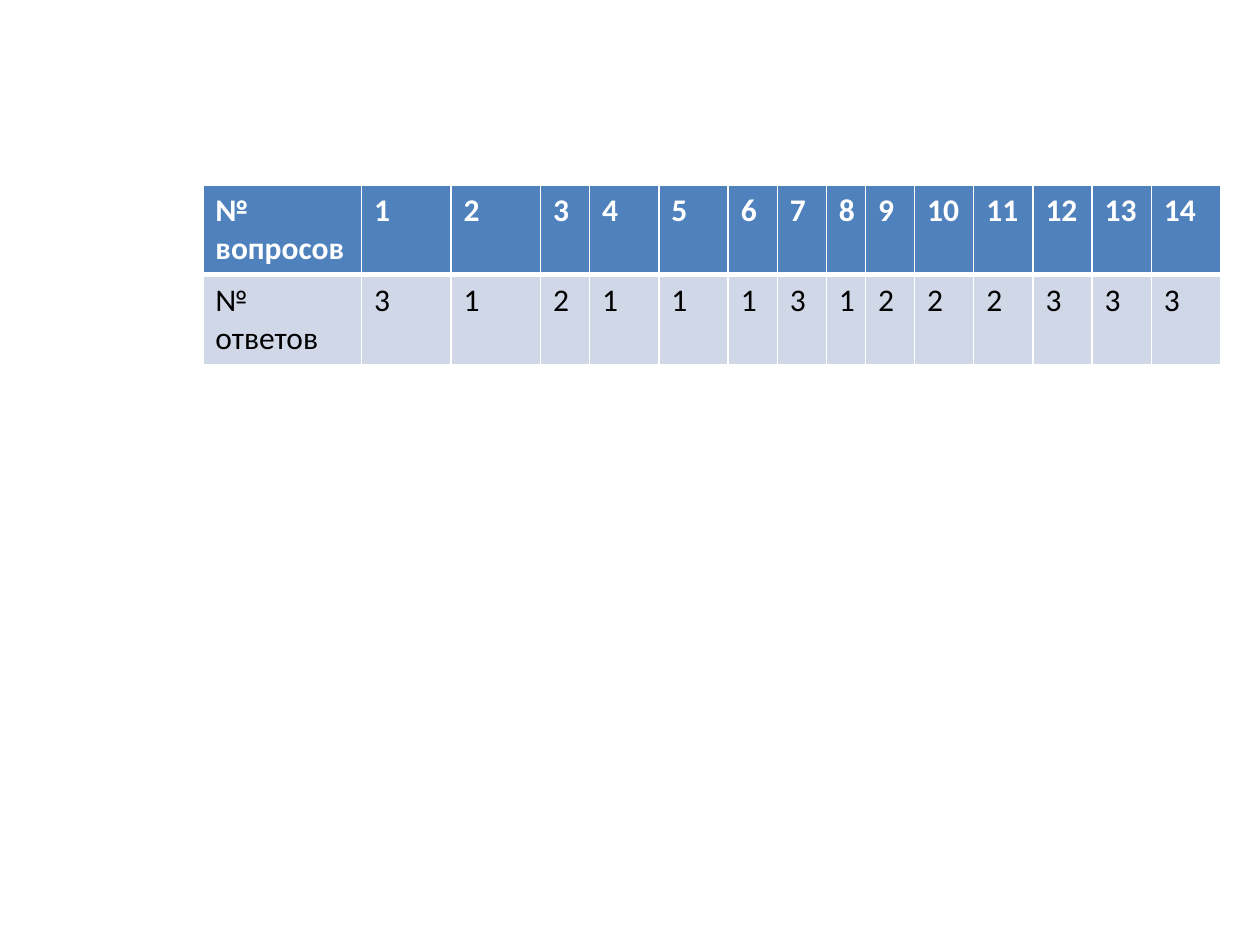
import pptx
import pptx.dml.color
import pptx.oxml
import pptx.util
from pptx.oxml.ns import nsdecls
from pptx.util import Inches

WHITE = pptx.dml.color.RGBColor(0xFF, 0xFF, 0xFF)
BLACK = pptx.dml.color.RGBColor(0x00, 0x00, 0x00)
HEADER_BLUE = pptx.dml.color.RGBColor(0x4F, 0x81, 0xBD)
BODY_BLUE = pptx.dml.color.RGBColor(0xD0, 0xD8, 0xE8)

COLUMN_WIDTHS = [1.26, 0.71, 0.71, 0.39, 0.55, 0.55, 0.39, 0.39,
                 0.31, 0.39, 0.47, 0.47, 0.47, 0.47, 0.55]
ROW_HEIGHT = 0.7
ANSWERS = [3, 1, 2, 1, 1, 1, 3, 1, 2, 2, 2, 3, 3, 3]


class AnswerPage:
    """Holds the style and the current slide."""

    font_name = "Calibri"
    font_size = pptx.util.Pt(18)
    thin, thick = 1, 3

    def __init__(self, deck):
        self.page = deck.slides.add_slide(deck.slide_layouts[6])

    def border(self, cell, side, points):
        line = pptx.oxml.parse_xml(
            f'<a:{side} {nsdecls("a")} w="{pptx.util.Pt(points)}">'
            f'<a:solidFill><a:srgbClr val="{WHITE}"/></a:solidFill></a:{side}>')
        cell._tc.get_or_add_tcPr().append(line)

    def cell(self, cell, text, header):
        # Borders come before the fill in the cell properties
        for side in ("lnL", "lnR", "lnT", "lnB"):
            divider = side == ("lnB" if header else "lnT")
            self.border(cell, side, self.thick if divider else self.thin)
        cell.fill.solid()
        cell.fill.fore_color.rgb = HEADER_BLUE if header else BODY_BLUE
        cell.text_frame.text = text
        for para in cell.text_frame.paragraphs:
            for span in para.runs:
                span.font.name = self.font_name
                span.font.size = self.font_size
                span.font.bold = header
                span.font.color.rgb = WHITE if header else BLACK

    def table(self, left, top, rows, widths, row_height):
        frame = self.page.shapes.add_table(
            len(rows), len(widths), Inches(left), Inches(top),
            Inches(sum(widths)), Inches(row_height * len(rows)))
        grid = frame.table
        for column, width in zip(grid.columns, widths):
            column.width = Inches(width)
        for row_index, texts in enumerate(rows):
            grid.rows[row_index].height = Inches(row_height)
            for column_index, text in enumerate(texts):
                self.cell(grid.cell(row_index, column_index), text, row_index == 0)


def main():
    deck = pptx.Presentation()
    deck.slide_width, deck.slide_height = Inches(10), Inches(7.5)

    # Answer key: question numbers above, answer numbers below
    questions = ["№\nвопросов"] + [str(n) for n in range(1, len(ANSWERS) + 1)]
    answers = ["№\nответов"] + [str(answer) for answer in ANSWERS]
    AnswerPage(deck).table(1.61, 1.47, [questions, answers], COLUMN_WIDTHS, ROW_HEIGHT)

    deck.save("out.pptx")


if __name__ == "__main__":
    main()
